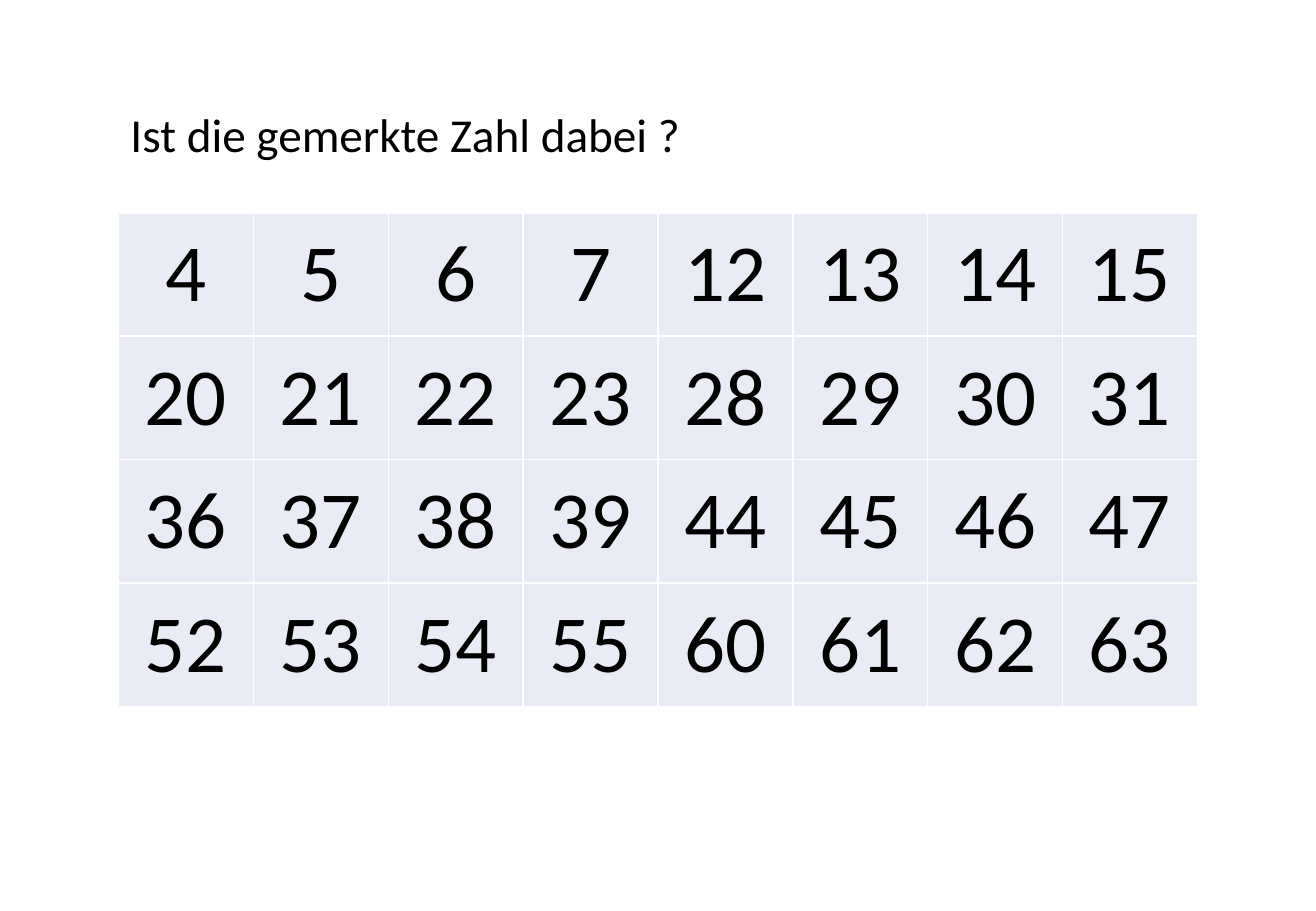
from lxml.etree import SubElement
from pptx import Presentation
from pptx.dml.color import RGBColor
from pptx.enum.text import MSO_AUTO_SIZE as AutoSize, PP_ALIGN as Align
from pptx.oxml.ns import qn
from pptx.util import Cm, Pt

COLORS = {"text": "000000", "cell": "E9EBF5", "border": "FFFFFF"}
FONT = "Calibri"
QUESTION = "Ist die gemerkte Zahl dabei ?"
CARD_BIT = 4
LARGEST_NUMBER = 63
COLUMNS = 8
LEFT = Cm(2.48)
COLUMN_WIDTH = Cm(2.82)
ROW_HEIGHT = Cm(2.58)


def style_text(para, size):
    for span in para.runs:
        span.font.name = FONT
        span.font.size = Pt(size)
        span.font.color.rgb = RGBColor.from_string(COLORS["text"])


def add_question(page):
    box = page.shapes.add_textbox(LEFT, Cm(2.08), Cm(12.12), Cm(1.45))
    frame = box.text_frame
    frame.text = QUESTION
    frame.word_wrap = False
    frame.auto_size = AutoSize.SHAPE_TO_FIT_TEXT
    style_text(frame.paragraphs[0], 28)


def add_borders(cell):
    properties = cell._tc.get_or_add_tcPr()
    for position, side in enumerate(("lnL", "lnR", "lnT", "lnB")):
        line = SubElement(properties, qn(f"a:{side}"), w=str(Pt(1)))
        fill = SubElement(line, qn("a:solidFill"))
        SubElement(fill, qn("a:srgbClr"), val=COLORS["border"])
        properties.insert(position, line)


def fill_cell(cell, number):
    cell.text_frame.text = str(number)
    cell.margin_left = cell.margin_right = Cm(0.1)
    cell.margin_top = cell.margin_bottom = Cm(0.25)
    cell.fill.solid()
    cell.fill.fore_color.rgb = RGBColor.from_string(COLORS["cell"])
    para = cell.text_frame.paragraphs[0]
    para.alignment = Align.CENTER
    style_text(para, 48)
    add_borders(cell)


def add_number_table(page):
    numbers = [n for n in range(LARGEST_NUMBER + 1) if n & CARD_BIT]
    rows = len(numbers) // COLUMNS
    table = page.shapes.add_table(
        rows, COLUMNS, LEFT, Cm(4.45), COLUMN_WIDTH * COLUMNS, ROW_HEIGHT * rows
    ).table
    table.first_row = False
    table.horz_banding = False
    for cell, number in zip(table.iter_cells(), numbers):
        fill_cell(cell, number)


def main():
    deck = Presentation()
    deck.slide_width = Cm(27.52)
    deck.slide_height = Cm(19.05)
    page = deck.slides.add_slide(deck.slide_layouts[6])
    add_number_table(page)
    add_question(page)
    deck.save("out.pptx")


if __name__ == "__main__":
    main()
